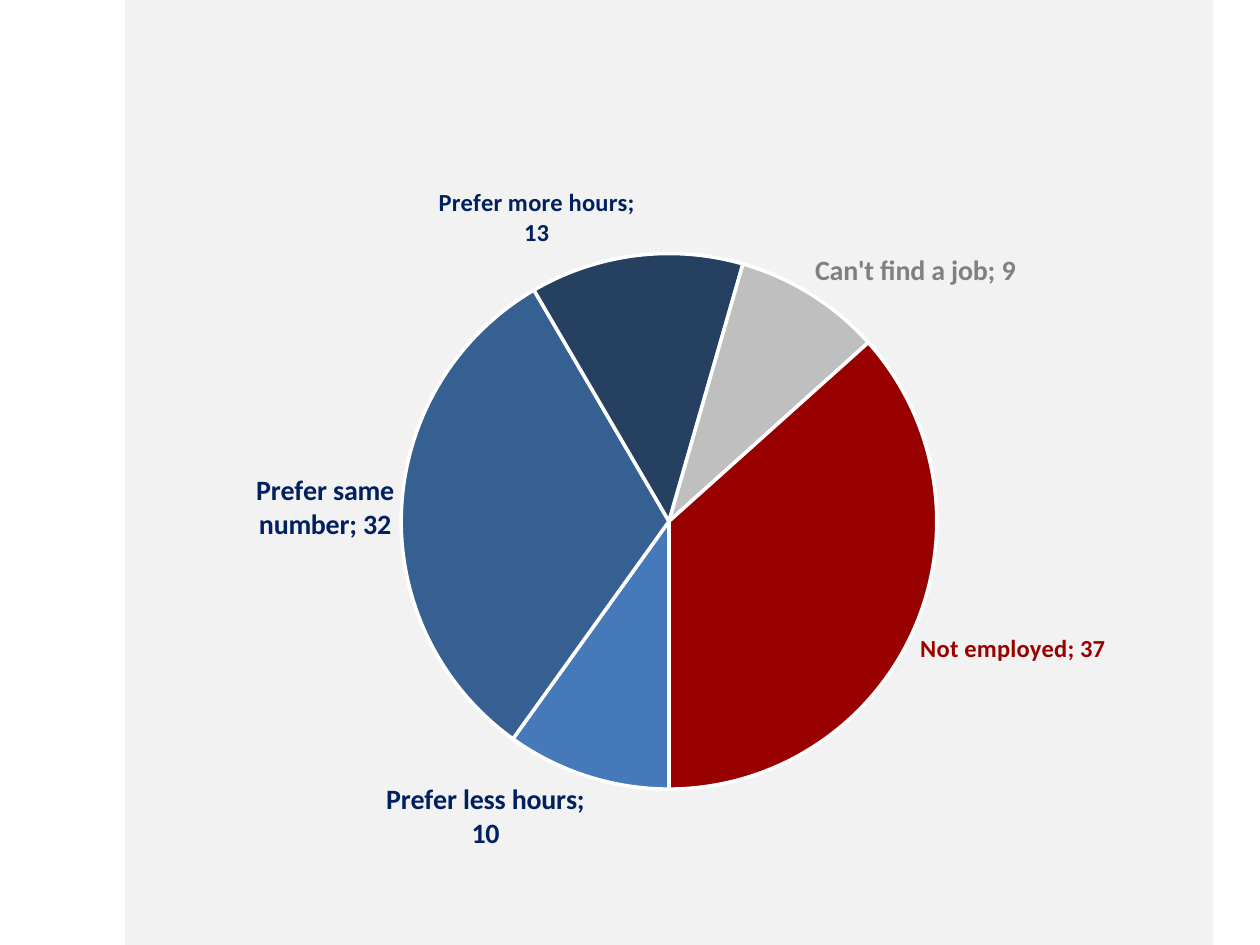
"""Build a slide with one pie chart of work-hour preferences."""
import pptx
import pptx.chart.data
import pptx.dml.color
import pptx.enum.chart
import pptx.oxml
import pptx.oxml.ns
import pptx.util

hues = {"back": "F2F2F2", "edge": "FFFFFF", "text": "000000", "navy": "002060",
        "gray": "808080", "sky": "4579B9", "blue": "376092", "deep": "254061",
        "ash": "BFBFBF", "red": "990000"}
slices = [("Prefer less hours", 10, "sky", "navy", 16),
          ("Prefer same number", 32, "blue", "navy", 16),
          ("Prefer more hours", 13, "deep", "navy", 14),
          ("Can't find a job", 9, "ash", "gray", 16),
          ("Not employed", 37, "red", "red", 14)]
frame = {"x": 0.248, "y": 0.248, "w": 0.504, "h": 0.492}
qn = pptx.oxml.ns.qn
spaces = pptx.oxml.ns.nsdecls("c", "a")


def tone(name):
    return pptx.dml.color.RGBColor.from_string(hues[name])


def style(font, face, size, bold, name):
    looks = {"name": face, "size": pptx.util.Pt(size), "bold": bold}
    for key, value in looks.items():
        setattr(font, key, value)
    font.color.rgb = tone(name)


deck = pptx.Presentation()
deck.slide_width, deck.slide_height = pptx.util.Inches(10), pptx.util.Inches(7.5)
slide = deck.slides.add_slide(deck.slide_layouts[6])
wide = deck.slide_width
side = int(wide * 0.864)

data = pptx.chart.data.CategoryChartData(number_format="0")
data.categories = [item[0] for item in slices]
data.add_series("Series 1", [item[1] for item in slices])
chart = slide.shapes.add_chart(pptx.enum.chart.XL_CHART_TYPE.PIE, int(wide * 0.099),
                               int(wide * -0.013), side, side, data).chart
chart.has_title = chart.has_legend = False
style(chart.font, "Arial", 10, False, "text")

plot = chart.plots[0]
plot.vary_by_categories = True
pie = plot.series[0]
outer = pptx.enum.chart.XL_LABEL_POSITION.OUTSIDE_END
traits = {"show_value": True, "show_category_name": True, "position": outer,
          "number_format": "0", "number_format_is_linked": False}
for key, value in traits.items():
    setattr(pie.data_labels, key, value)
style(pie.data_labels.font, "Calibri", 16, True, "navy")

for spot, (name, value, fill, ink, size) in enumerate(slices):
    point = pie.points[spot]
    point.format.fill.solid()
    point.format.fill.fore_color.rgb = tone(fill)
    point.format.line.color.rgb = tone("edge")
    point.format.line.width = pptx.util.Pt(2)
    style(point.data_label.font, "Calibri", size, True, ink)
    point.data_label.position = outer

root = chart.element
for flag in root.iter(qn("c:showCatName")):
    flag.set("val", "1")
for flag in list(root.iter(qn("c:showBubbleSize"))):
    flag.addnext(pptx.oxml.parse_xml(f"<c:separator {spaces}>; </c:separator>"))

body = root.find(qn("c:chart"))
area = body.find(qn("c:plotArea"))
for old in area.findall(qn("c:layout")):
    area.remove(old)
modes = "".join(f'<c:{key}Mode val="edge"/>' for key in "xy")
sizes = "".join(f'<c:{key} val="{value}"/>' for key, value in frame.items())
area.insert(0, pptx.oxml.parse_xml(
    f'<c:layout {spaces}><c:manualLayout><c:layoutTarget val="inner"/>'
    f"{modes}{sizes}</c:manualLayout></c:layout>"))
area.find(qn("c:pieChart")).append(
    pptx.oxml.parse_xml(f'<c:firstSliceAng {spaces} val="180"/>'))
body.addnext(pptx.oxml.parse_xml(
    f'<c:spPr {spaces}><a:solidFill><a:srgbClr val="{hues["back"]}"/></a:solidFill>'
    "<a:ln><a:noFill/></a:ln></c:spPr>"))

deck.save("out.pptx")
